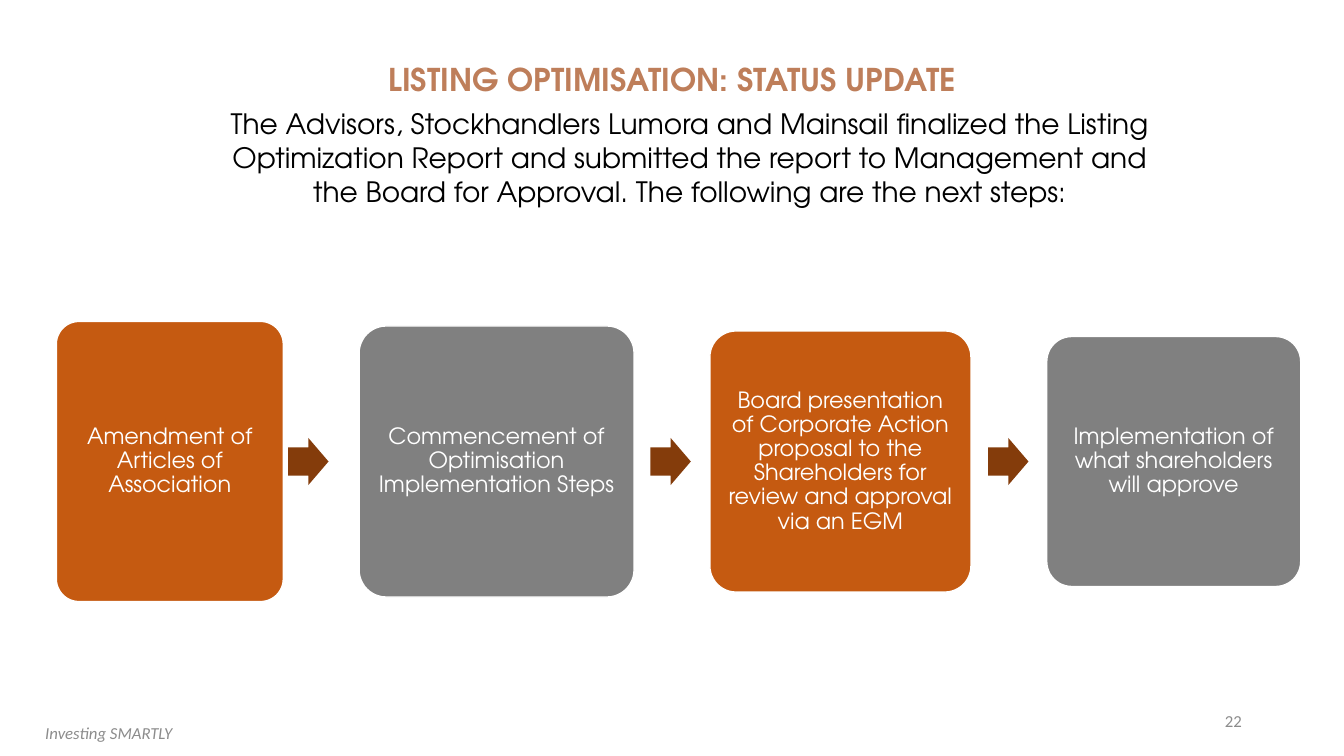
import pptx
import pptx.util
import pptx.dml.color
import pptx.enum.shapes
import pptx.enum.text

Cm = pptx.util.Cm
KINDS = pptx.enum.shapes.MSO_SHAPE
ALIGN = pptx.enum.text.PP_ALIGN
ANCHOR = pptx.enum.text.MSO_ANCHOR

SANS = "TeX Gyre Adventor"
ORANGE, GREY, BROWN, WHITE = "C55A11", "808080", "843C0B", "FFFFFF"

# Text, width, height, space between the box and its arrow
STEPS = [
    ("Amendment of Articles of Association", 5.72, 7.06, 0.12),
    ("Commencement of Optimisation Implementation Steps", 6.93, 6.83, 0.41),
    ("Board presentation of Corporate Action proposal to the "
     "Shareholders for review and approval via an EGM", 6.58, 6.58, 0.43),
    ("Implementation of what shareholders will approve", 6.4, 6.3, 0),
]


def color(code):
    return pptx.dml.color.RGBColor.from_string(code)


def write(shape, text, size=16, font=SANS, ink=WHITE, bold=False, italic=False,
          align=ALIGN.CENTER, anchor=ANCHOR.MIDDLE, pitch=None, inset=None, indent=0):
    frame = shape.text_frame
    frame.word_wrap = True
    frame.vertical_anchor = anchor
    if inset is not None:
        frame.margin_left = frame.margin_right = Cm(inset)
        frame.margin_top = frame.margin_bottom = Cm(inset)
    para = frame.paragraphs[0]
    para.alignment = align
    if pitch:
        para.line_spacing = pitch
    if indent:
        props = para._p.get_or_add_pPr()
        props.set("marL", str(Cm(indent)))
        props.set("indent", "0")
    run = para.add_run()
    run.text = text
    run.font.name = font
    run.font.size = pptx.util.Pt(size)
    run.font.bold = bold
    run.font.italic = italic
    run.font.color.rgb = color(ink)


def label(slide, box, text, **style):
    write(slide.shapes.add_textbox(*map(Cm, box)), text, **style)


def block(slide, kind, box, fill, adjust, line=None):
    shape = slide.shapes.add_shape(kind, *map(Cm, box))
    shape.shadow.inherit = False
    shape.fill.solid()
    shape.fill.fore_color.rgb = color(fill)
    if line:
        shape.line.color.rgb = color(line)
        shape.line.width = pptx.util.Pt(1)
    else:
        shape.line.fill.background()
    for i, value in enumerate(adjust):
        shape.adjustments[i] = value
    return shape


def header(slide, left, top, width):
    label(slide, (left, top, width, 1.52), "LISTING OPTIMISATION: STATUS UPDATE",
          size=22.4, ink="BE7E5A", bold=True, pitch=0.9)
    label(slide, (left + 2.79, top + 1.27, 25.78, 2.82),
          "The Advisors, Stockhandlers Lumora and Mainsail finalized the Listing "
          "Optimization Report and submitted the report to Management and "
          "the Board for Approval. The following are the next steps:",
          size=20, ink="000000", anchor=ANCHOR.TOP, indent=1.27)


def flow(slide, left, middle, gap=1.91):
    wide, high = 1.02, 1.19
    for i, (text, width, height, space) in enumerate(STEPS):
        card = block(slide, KINDS.ROUNDED_RECTANGLE,
                     (left, middle - height / 2, width, height),
                     GREY if i % 2 else ORANGE, [0.1], line=WHITE)
        write(card, text, pitch=0.9, inset=0.2)
        left += width
        if i < len(STEPS) - 1:
            block(slide, KINDS.RIGHT_ARROW,
                  (left + space, middle - high / 2, wide, high), BROWN, [0.6, 0.5])
        left += gap


def footer(slide, top):
    style = dict(size=12, font="Calibri", ink="8C8C8C")
    label(slide, (-2.97, top + 0.3, 11.43, 1.02), "Investing SMARTLY", italic=True, **style)
    label(slide, (23.93, top, 7.62, 1.02), "22", align=ALIGN.RIGHT, **style)


def main():
    deck = pptx.Presentation()
    deck.slide_width, deck.slide_height = Cm(33.87), Cm(19.05)
    slide = deck.slides.add_slide(deck.slide_layouts[6])
    header(slide, 1.07, 1.3, 31.75)
    flow(slide, 1.42, 11.63)
    footer(slide, 17.65)
    deck.save("out.pptx")


if __name__ == "__main__":
    main()
